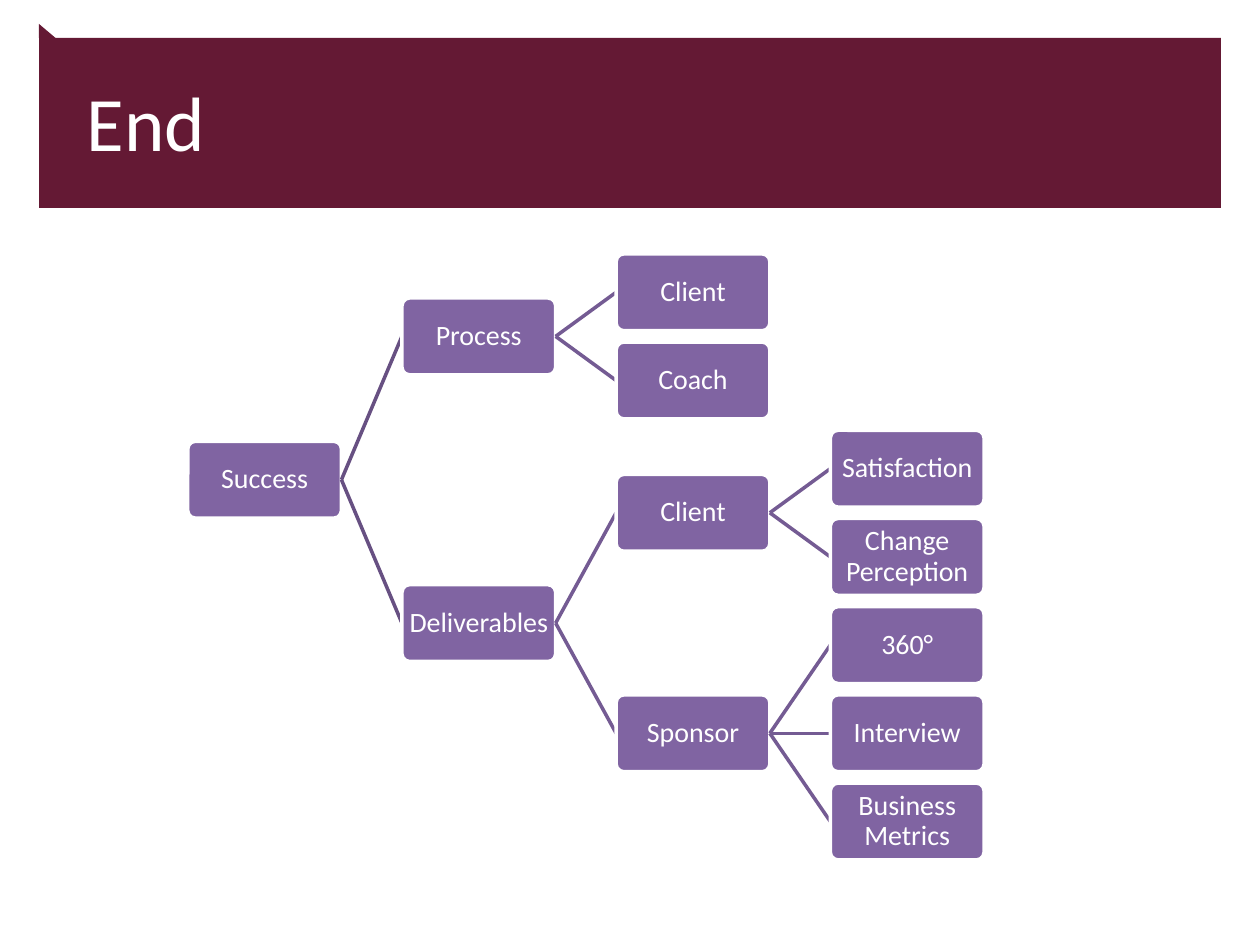
from dataclasses import dataclass, field
from itertools import count

from lxml.etree import SubElement
from pptx import Presentation
from pptx.dml.color import RGBColor as Color
from pptx.enum.shapes import MSO_CONNECTOR as Link, MSO_SHAPE as Shape
from pptx.enum.text import MSO_ANCHOR as Anchor, PP_ALIGN as Align
from pptx.oxml.ns import qn
from pptx.util import Inches, Pt


@dataclass
class Theme:
    font: str = "Calibri"
    band: Color = Color(0x64, 0x19, 0x34)
    box: Color = Color(0x80, 0x64, 0xA2)
    stem: Color = Color(0x67, 0x50, 0x82)
    twig: Color = Color(0x74, 0x5B, 0x93)
    white: Color = Color(0xFF, 0xFF, 0xFF)
    head: int = 44
    body: int = 16
    line: int = 2


@dataclass
class Node:
    text: str
    kids: list = field(default_factory=list)
    mid: float = 0


class Deck:
    left, top = 1.49, 2.32
    wide, high = 1.22, 0.61
    step, pitch = 1.7, 0.7

    def __init__(self, prs, theme):
        self.theme = theme
        self.slide = prs.slides.add_slide(prs.slide_layouts[5])

    def style(self, frame, size):
        frame.word_wrap = True
        frame.vertical_anchor = Anchor.MIDDLE
        font = frame.paragraphs[0].runs[0].font
        font.name = self.theme.font
        font.size = Pt(size)
        font.color.rgb = self.theme.white

    def title(self, text):
        title = self.slide.shapes.title
        title.left, title.top = Inches(0.59), Inches(0.29)
        title.width, title.height = Inches(9.06), Inches(1.34)
        title.text_frame.text = text
        title.text_frame.paragraphs[0].alignment = Align.LEFT
        self.style(title.text_frame, self.theme.head)

    def shape(self, kind, x, y, w, h, fill):
        item = self.slide.shapes.add_shape(
            kind, Inches(x), Inches(y), Inches(w), Inches(h))
        item.shadow.inherit = False
        item.fill.solid()
        item.fill.fore_color.rgb = fill
        item.line.fill.background()
        return item

    def band(self, kind, x, y, w, h):
        item = self.shape(kind, x, y, w, h, self.theme.band)
        self.slide.shapes.title._element.addprevious(item._element)

    def box(self, text, x, mid):
        item = self.shape(Shape.ROUNDED_RECTANGLE, x, mid - self.high / 2,
                          self.wide, self.high, self.theme.box)
        item.adjustments[0] = 0.1
        item.line.color.rgb = self.theme.white
        item.line.width = Pt(self.theme.line)
        frame = item.text_frame
        frame.text = text
        frame.margin_left = frame.margin_right = Inches(0.01)
        frame.margin_top = frame.margin_bottom = Inches(0.01)
        para = frame.paragraphs[0]
        para.alignment = Align.CENTER
        para.line_spacing = 0.9
        self.style(frame, self.theme.body)

    def link(self, x, y, x2, y2, color):
        item = self.slide.shapes.add_connector(
            Link.STRAIGHT, Inches(x), Inches(y), Inches(x2), Inches(y2))
        item.line.color.rgb = color
        item.line.width = Pt(self.theme.line)
        SubElement(item._element.spPr, qn("a:effectLst"))

    def place(self, node, rows):
        for kid in node.kids:
            self.place(kid, rows)
        if node.kids:
            node.mid = (node.kids[0].mid + node.kids[-1].mid) / 2
        else:
            node.mid = self.top + next(rows) * self.pitch

    def tree(self, node, level=0):
        x = self.left + level * self.step
        self.box(node.text, x, node.mid)
        color = self.theme.twig if level else self.theme.stem
        for kid in node.kids:
            self.link(x + self.wide, node.mid, x + self.step, kid.mid, color)
            self.tree(kid, level + 1)


def main():
    prs = Presentation()
    prs.slide_width, prs.slide_height = Inches(10), Inches(7.5)
    deck = Deck(prs, Theme())
    deck.band(Shape.RECTANGLE, 0.31, 0.3, 9.38, 1.35)
    deck.band(Shape.RIGHT_TRIANGLE, 0.31, 0.19, 0.13, 0.11)
    deck.title("End")
    root = Node("Success", [
        Node("Process", [Node("Client"), Node("Coach")]),
        Node("Deliverables", [
            Node("Client", [Node("Satisfaction"), Node("Change Perception")]),
            Node("Sponsor", [Node("360°"), Node("Interview"),
                             Node("Business Metrics")]),
        ]),
    ])
    deck.place(root, count())
    deck.tree(root)
    prs.save("out.pptx")


if __name__ == "__main__":
    main()
